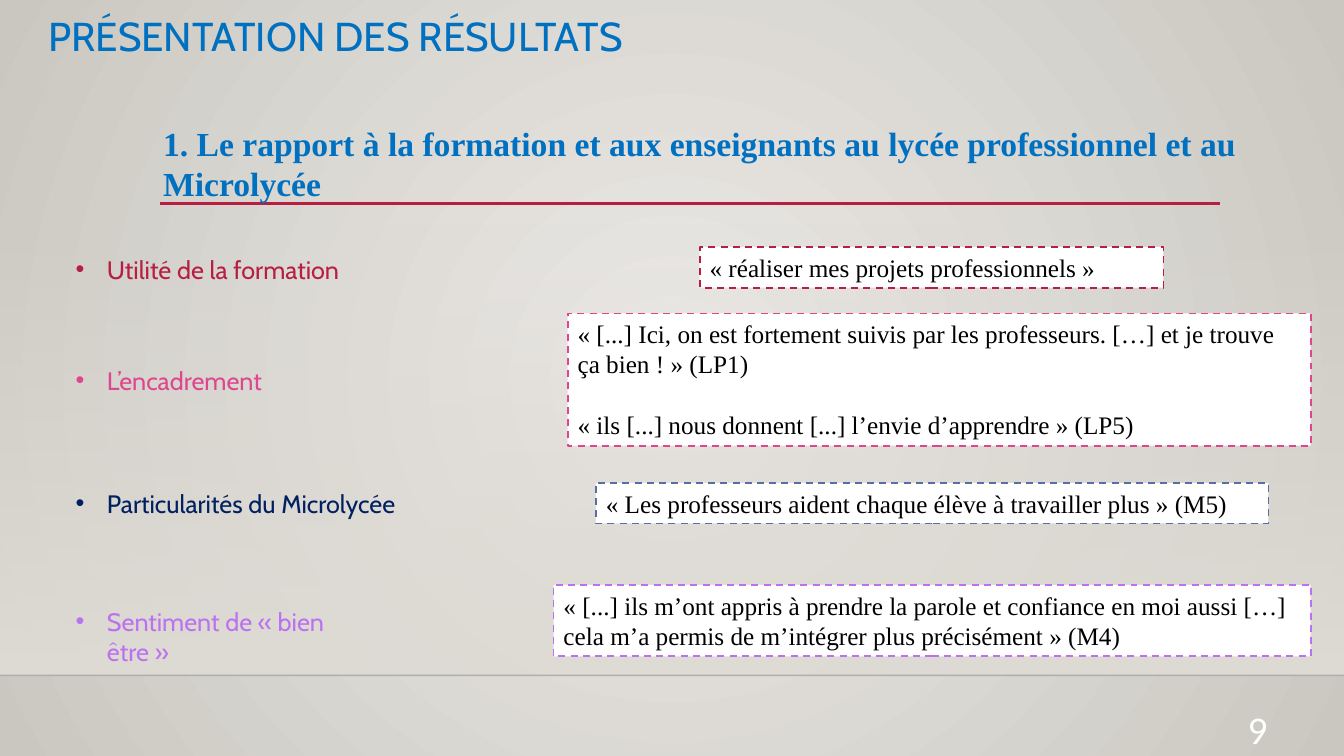
from dataclasses import dataclass

from lxml.etree import SubElement
from pptx import Presentation
from pptx.dml.color import RGBColor
from pptx.enum.dml import MSO_LINE_DASH_STYLE as Dash
from pptx.enum.shapes import MSO_CONNECTOR, MSO_SHAPE
from pptx.enum.text import MSO_ANCHOR, MSO_AUTO_SIZE, PP_ALIGN
from pptx.oxml.ns import qn
from pptx.util import Inches, Pt


@dataclass(frozen=True)
class Theme:
    blue: str = "0070C0"
    crimson: str = "B71E42"
    pink: str = "DE478E"
    navy: str = "002060"
    slate: str = "586EA6"
    violet: str = "BC72F0"
    white: str = "FFFFFF"
    black: str = "000000"
    light: str = "ECEAE7"
    shade: str = "CAC7C1"
    floor: str = "DFDBD5"
    sans: str = "Cabin"
    serif: str = "Times New Roman"
    number_font: str = "Calibri"
    title_size: float = 28.8
    heading_size: float = 24
    body_size: float = 18
    number_size: float = 28
    paragraph_gap: float = 21.9


@dataclass(frozen=True)
class Area:
    """Shares of the slide's width and height, in percent."""
    left: float
    top: float
    width: float
    height: float = 5.38


@dataclass(frozen=True)
class Topic:
    label: str
    label_area: Area
    color: str
    quotes: tuple[str, ...]
    quote_area: Area
    border: str


theme = Theme()
LABEL_LEFT = 4.88
TOPICS = [
    Topic("Utilité de la formation", Area(LABEL_LEFT, 32.93, 22.06), theme.crimson,
          ("« réaliser mes projets professionnels »",),
          Area(52.06, 32.67, 34.51), theme.crimson),
    Topic("L’encadrement", Area(LABEL_LEFT, 47.6, 15.83), theme.pink,
          ("« [...] Ici, on est fortement suivis par les professeurs. […] "
           "et je trouve ça bien ! » (LP1)",
           "« ils [...] nous donnent [...] l’envie d’apprendre » (LP5)"),
          Area(42.24, 41.47, 55.29, 17.5), theme.pink),
    Topic("Particularités du Microlycée", Area(LABEL_LEFT, 63.87, 25.81), theme.navy,
          ("« Les professeurs aident chaque élève à travailler plus » (M5)",),
          Area(44.34, 63.87, 50.04), theme.slate),
    Topic("Sentiment de « bien être »", Area(LABEL_LEFT, 79.47, 24.61), theme.violet,
          ("« [...] ils m’ont appris à prendre la parole et confiance en moi aussi […] "
           "cela m’a permis de m’intégrer plus précisément » (M4)",),
          Area(41.19, 77.38, 56.34, 9.45), theme.violet),
]

presentation = Presentation()
presentation.slide_width = Inches(13.33)
presentation.slide_height = Inches(7.5)
# The comparison layout offers a title and four bodies, one per topic
slide = presentation.slides.add_slide(presentation.slide_layouts[4])


def across(share: float) -> int:
    return round(presentation.slide_width * share / 100)


def down(share: float) -> int:
    return round(presentation.slide_height * share / 100)


def bounds(area: Area) -> tuple[int, int, int, int]:
    return across(area.left), down(area.top), across(area.width), down(area.height)


def place(shape, area: Area) -> None:
    shape.left, shape.top, shape.width, shape.height = bounds(area)


def french_spacing(text: str) -> str:
    """Keep French punctuation on the line of its word."""
    fixed = chr(160)
    for mark in ("»", "!"):
        text = text.replace(f" {mark}", fixed + mark)
    return text.replace("« ", "«" + fixed)


def set_alpha(color_owner, percent: int) -> None:
    for color in color_owner.iter(qn("a:srgbClr")):
        SubElement(color, qn("a:alpha"), val=str(percent * 1000))


def add_bullet(paragraph) -> None:
    properties = paragraph._p.get_or_add_pPr()
    properties.set("marL", str(Inches(0.31)))
    properties.set("indent", str(-Inches(0.31)))
    SubElement(properties, qn("a:buFont"), typeface="Arial")
    SubElement(properties, qn("a:buChar"), char="•")


def write(shape, *texts: str, font: str, size: float, color: str, bold: bool = False,
          align: PP_ALIGN = PP_ALIGN.LEFT, bullet: bool = False, grow: bool = False,
          line_spacing: float = 1.0, gap: float = 0) -> None:
    frame = shape.text_frame
    frame.word_wrap = True
    frame.auto_size = MSO_AUTO_SIZE.SHAPE_TO_FIT_TEXT if grow else MSO_AUTO_SIZE.NONE
    frame.vertical_anchor = MSO_ANCHOR.TOP
    for index, text in enumerate(texts):
        paragraph = frame.add_paragraph() if index else frame.paragraphs[0]
        paragraph.alignment = align
        paragraph.line_spacing = line_spacing
        paragraph.space_before = Pt(gap if index else 0)
        if bullet:
            add_bullet(paragraph)
        run = paragraph.add_run()
        run.text = french_spacing(text)
        run.font.name, run.font.size, run.font.bold = font, Pt(size), bold
        run.font.color.rgb = RGBColor.from_string(color)


def add_rule(left: float, right: float, top: float, color: str, width: float):
    rule = slide.shapes.add_connector(
        MSO_CONNECTOR.STRAIGHT, across(left), down(top), across(right), down(top))
    rule.line.color.rgb = RGBColor.from_string(color)
    rule.line.width = Pt(width)
    SubElement(rule._element.spPr, qn("a:effectLst"))
    return rule


def add_rectangle(area: Area):
    rectangle = slide.shapes.add_shape(MSO_SHAPE.RECTANGLE, *bounds(area))
    rectangle.shadow.inherit = False
    return rectangle


def set_gradient(fill, *colors: str) -> None:
    fill.gradient()
    for stop, position, color in zip(fill.gradient_stops, (0, 1), colors):
        stop.position = position
        stop.color.rgb = RGBColor.from_string(color)


def draw_backdrop() -> None:
    # Radial background
    set_gradient(slide.background.fill, theme.light, theme.shade)
    gradient = next(slide._element.iter(qn("a:gradFill")))
    gradient.remove(gradient.find(qn("a:lin")))
    radial = SubElement(gradient, qn("a:path"), path="circle")
    SubElement(radial, qn("a:fillToRect"), l="50000", t="50000", r="50000", b="50000")

    # Floor that fades in downwards
    floor = add_rectangle(Area(0, 29.47, 100, 59.87))
    set_gradient(floor.fill, theme.floor, theme.floor)
    floor.fill.gradient_angle = 270
    floor.line.fill.background()
    set_alpha(next(floor._element.iter(qn("a:gs"))), 0)

    # Floor edge and heading underline
    edge = add_rule(0, 100, 89.33, theme.black, 1)
    set_alpha(edge._element.spPr, 20)
    underline = add_rule(11.93, 90.77, 26.93, theme.crimson, 2.5)

    # Behind the placeholders, after the two property elements of the shape tree
    for position, shape in enumerate((floor, edge, underline), start=2):
        slide.shapes._spTree.insert(position, shape._element)


def draw_headings() -> None:
    title = slide.shapes.title
    place(title, Area(2.85, 1.55, 78.77, 8.27))
    write(title, "PRÉSENTATION DES RÉSULTATS", font=theme.sans, size=theme.title_size,
          color=theme.blue, line_spacing=0.9)
    heading = slide.shapes.add_textbox(*bounds(Area(11.4, 15.6, 82.37, 12.13)))
    write(heading, "1. Le rapport à la formation et aux enseignants au lycée "
          "professionnel et au Microlycée", font=theme.serif, size=theme.heading_size,
          color=theme.blue, bold=True, grow=True)
    number = slide.shapes.add_textbox(*bounds(Area(71.72, 92.67, 23.33)))
    write(number, "9", font=theme.number_font, size=theme.number_size,
          color=theme.white, align=PP_ALIGN.RIGHT)


def draw_topic(topic: Topic, label) -> None:
    place(label, topic.label_area)
    write(label, topic.label, font=theme.sans, size=theme.body_size,
          color=topic.color, bullet=True, grow=True)
    box = add_rectangle(topic.quote_area)
    box.fill.solid()
    box.fill.fore_color.rgb = RGBColor.from_string(theme.white)
    box.line.color.rgb = RGBColor.from_string(topic.border)
    box.line.width = Pt(1.25)
    box.line.dash_style = Dash.DASH
    write(box, *topic.quotes, font=theme.serif, size=theme.body_size,
          color=theme.black, gap=theme.paragraph_gap, grow=True)


draw_backdrop()
draw_headings()
bodies = [shape for shape in slide.placeholders if shape.placeholder_format.idx > 0]
for topic, body in zip(TOPICS, bodies):
    draw_topic(topic, body)

presentation.save("out.pptx")
